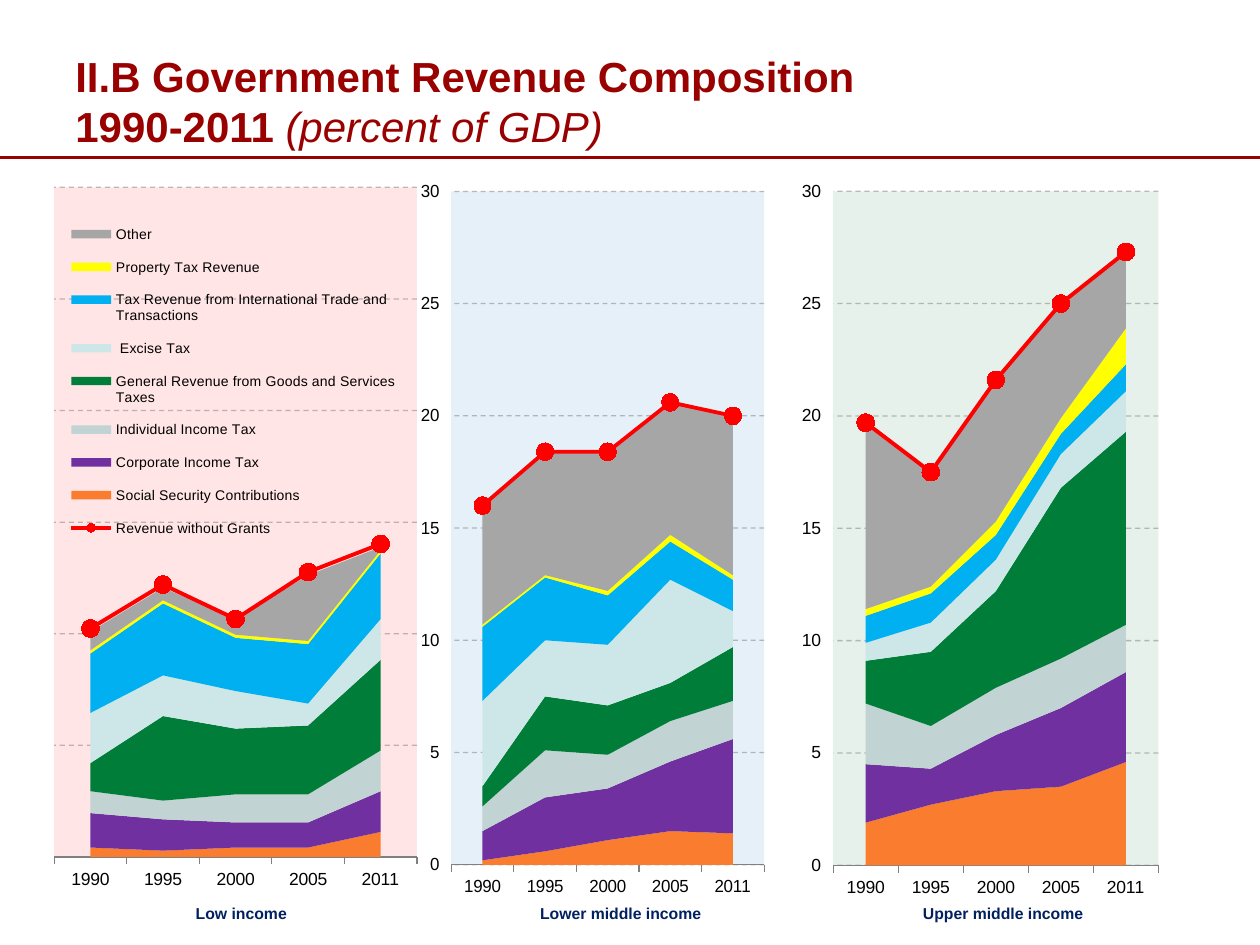
from dataclasses import dataclass

from pptx import Presentation
from pptx.chart.data import CategoryChartData
from pptx.dml.color import RGBColor
from pptx.enum.chart import XL_CHART_TYPE as ChartType
from pptx.enum.chart import XL_LEGEND_POSITION as LegendPosition
from pptx.enum.chart import XL_MARKER_STYLE as MarkerStyle
from pptx.enum.chart import XL_TICK_MARK as TickMark
from pptx.enum.dml import MSO_LINE as LineDash
from pptx.enum.shapes import MSO_CONNECTOR as Connector
from pptx.enum.text import MSO_ANCHOR as Anchor
from pptx.enum.text import PP_ALIGN as Align
from pptx.oxml import parse_xml
from pptx.oxml.ns import nsdecls, qn
from pptx.util import Inches, Pt


@dataclass(frozen=True)
class Theme:
    font: str = "Arial"
    title: str = "990000"
    caption: str = "002060"
    text: str = "000000"
    grid: str = "606060"
    axis: str = "808080"
    total: str = "FF0000"
    title_size: int = 24
    caption_size: int = 9
    axis_size: int = 10
    legend_size: int = 8


THEME = Theme()
YEARS = ["1990", "1995", "2000", "2005", "2011"]
TOTAL_NAME = "Revenue without Grants"
SOURCES = [
    ("Social Security Contributions", "F97C2F"),
    ("Corporate Income Tax", "7030A0"),
    ("Individual Income Tax", "C1D3D2"),
    ("General Revenue from Goods and Services Taxes", "007E39"),
    (" Excise Tax", "CDE7E8"),
    ("Tax Revenue from International Trade and Transactions", "00B0F0"),
    ("Property Tax Revenue", "FFFF00"),
    ("Other", "A6A6A6"),
]


@dataclass(frozen=True)
class Panel:
    """One income group; the last row of values is the total line."""
    caption: str
    caption_at: tuple
    chart_at: tuple
    plot: tuple
    tint: str
    rows: list
    top: float = 30
    step: float = 5
    has_legend: bool = False


PANELS = [
    Panel("Low income", (0.58, 7.12, 2.67, 0.25), (0.37, 1.37, 3, 5.81),
          (0.02, 0.02, 0.96, 0.915), "FF0000",
          [[3, 2, 3, 3, 8], [11, 10, 8, 8, 13], [7, 6, 9, 9, 13],
           [9, 27, 21, 22, 29], [16, 13, 12, 7, 13], [19, 23, 17, 19, 21],
           [1, 1, 1, 1, 1], [6, 4, 5, 21, 1], [73, 87, 76, 91, 100]],
          top=214, step=35.66, has_legend=True),
    Panel("Lower middle income", (3.55, 7.12, 2.75, 0.25), (3.34, 1.38, 3.1, 5.81),
          (0.044, 0.024, 0.831, 0.92), "0070C0",
          [[0.2, 0.6, 1.1, 1.5, 1.4], [1.3, 2.4, 2.3, 3.1, 4.2],
           [1.1, 2.1, 1.5, 1.8, 1.7], [0.9, 2.4, 2.2, 1.7, 2.4],
           [3.8, 2.5, 2.7, 4.6, 1.6], [3.3, 2.8, 2.2, 1.7, 1.4],
           [0.1, 0.1, 0.2, 0.3, 0.2], [5.3, 5.5, 6.2, 6, 7.1],
           [16, 18.4, 18.4, 20.6, 20]]),
    Panel("Upper middle income", (6.5, 7.12, 2.92, 0.25), (6.25, 1.39, 3.1, 5.81),
          (0.117, 0.022, 0.833, 0.921), "007E39",
          [[1.9, 2.7, 3.3, 3.5, 4.6], [2.6, 1.6, 2.5, 3.5, 4],
           [2.7, 1.9, 2.1, 2.2, 2.1], [1.9, 3.3, 4.3, 7.6, 8.6],
           [0.8, 1.3, 1.4, 1.5, 1.8], [1.2, 1.3, 1.1, 0.9, 1.2],
           [0.3, 0.3, 0.6, 0.7, 1.6], [8.3, 5.1, 6.2, 5.1, 3.5],
           [19.7, 17.5, 21.6, 25, 27.3]]),
]


def rgb(color):
    return RGBColor.from_string(color)


def style_font(font, size, color, bold=False, italic=False):
    font.name, font.size, font.bold, font.italic = THEME.font, Pt(size), bold, italic
    font.color.rgb = rgb(color)


def add_text_box(page, at):
    box = page.shapes.add_textbox(*map(Inches, at))
    box.text_frame.word_wrap = True
    return box.text_frame


def add_title(page):
    frame = add_text_box(page, (0.5, 0.08, 8.17, 1.17))
    frame.vertical_anchor = Anchor.BOTTOM
    frame.text = "II.B Government Revenue Composition\v1990-2011 "
    para = frame.paragraphs[0]
    para.add_run().text = "(percent of GDP)"
    *headings, unit = para.runs
    for span in headings:
        style_font(span.font, THEME.title_size, THEME.title, bold=True)
    style_font(unit.font, THEME.title_size, THEME.title, italic=True)


def add_rule(page):
    rule = page.shapes.add_connector(
        Connector.STRAIGHT, 0, Inches(1.25), Inches(10), Inches(1.25))
    rule.line.color.rgb = rgb(THEME.title)
    rule.line.width = Pt(2.25)
    rule._element.spPr.append(parse_xml(f"<a:effectLst {nsdecls('a')}/>"))


def add_caption(page, panel):
    frame = add_text_box(page, panel.caption_at)
    frame.text = panel.caption
    para = frame.paragraphs[0]
    para.alignment = Align.CENTER
    style_font(para.runs[0].font, THEME.caption_size, THEME.caption, bold=True)


def set_layout(parent, index, place, target=""):
    """Place a plot area or legend by fractions of the chart."""
    for old in parent.findall(qn("c:layout")):
        parent.remove(old)
    edges = "".join(f'<c:{name}Mode val="edge"/>' for name in "xy")
    sizes = "".join(f'<c:{name} val="{value}"/>' for name, value in zip("xywh", place))
    parent.insert(index, parse_xml(
        f"<c:layout {nsdecls('c')}><c:manualLayout>{target}{edges}{sizes}"
        "</c:manualLayout></c:layout>"))


def move_total_to_line(chart):
    """Turn the last area series into a marked line on the same axes."""
    area = chart.plots[0]._element
    axes = "".join(f'<c:axId val="{axis.get("val")}"/>'
                   for axis in area.findall(qn("c:axId")))
    line = parse_xml(
        f'<c:lineChart {nsdecls("c")}><c:grouping val="standard"/>'
        f'<c:varyColors val="0"/><c:marker val="1"/>{axes}</c:lineChart>')
    line.insert(2, area.findall(qn("c:ser"))[-1])
    area.addnext(line)

    total = chart.plots[1].series[0]
    total.smooth = False
    total.format.line.color.rgb = rgb(THEME.total)
    total.format.line.width = Pt(2.25)
    total.marker.style, total.marker.size = MarkerStyle.CIRCLE, 10
    total.marker.format.fill.solid()
    total.marker.format.fill.fore_color.rgb = rgb(THEME.total)
    total.marker.format.line.color.rgb = rgb(THEME.total)


def style_axes(chart, panel):
    years, values = chart.category_axis, chart.value_axis
    years.has_major_gridlines = False
    years.major_tick_mark = values.major_tick_mark = TickMark.OUTSIDE
    years.format.line.color.rgb = rgb(THEME.axis)
    values.minimum_scale, values.maximum_scale = 0, panel.top
    values.major_unit = panel.step
    values.tick_labels.number_format = "0"
    values.tick_labels.number_format_is_linked = False
    values.format.line.fill.background()
    values.visible = not panel.has_legend
    values.has_major_gridlines = True
    grid = values.major_gridlines.format.line
    grid.color.rgb = rgb(THEME.grid)
    grid.width, grid.dash_style = Pt(0.75), LineDash.DASH
    for color in values.major_gridlines._xAx.iterfind(
            f"{qn('c:majorGridlines')}//{qn('a:srgbClr')}"):
        color.append(parse_xml(f'<a:alpha {nsdecls("a")} val="40000"/>'))
    values._element.find(qn("c:crossBetween")).set("val", "between")


def style_plot_area(chart, panel):
    plot_area = chart._chartSpace.chart.plotArea
    set_layout(plot_area, 0, panel.plot, '<c:layoutTarget val="inner"/>')
    plot_area.append(parse_xml(
        f'<c:spPr {nsdecls("c", "a")}><a:solidFill><a:srgbClr val="{panel.tint}">'
        '<a:alpha val="10000"/></a:srgbClr></a:solidFill></c:spPr>'))


def add_legend(chart):
    chart.has_legend = True
    legend = chart.legend
    legend.position, legend.include_in_layout = LegendPosition.LEFT, False
    style_font(legend.font, THEME.legend_size, THEME.text)
    set_layout(legend._element, 1, (0.02, 0.05, 0.95, 0.47))


def add_revenue_chart(page, panel):
    data = CategoryChartData()
    data.categories = YEARS
    names = [name for name, _ in SOURCES] + [TOTAL_NAME]
    for name, row in zip(names, panel.rows):
        data.add_series(name, row)
    chart = page.shapes.add_chart(
        ChartType.AREA_STACKED, *map(Inches, panel.chart_at), data).chart
    chart.has_title = chart.has_legend = False
    style_font(chart.font, THEME.axis_size, THEME.text)
    chart.plots[0].vary_by_categories = False
    move_total_to_line(chart)
    for series, (_, color) in zip(chart.plots[0].series, SOURCES):
        series.format.fill.solid()
        series.format.fill.fore_color.rgb = rgb(color)
        series.format.line.fill.background()
    style_axes(chart, panel)
    style_plot_area(chart, panel)
    if panel.has_legend:
        add_legend(chart)


def main():
    deck = Presentation()
    deck.slide_width, deck.slide_height = Inches(10), Inches(7.5)
    page = deck.slides.add_slide(deck.slide_layouts[6])
    add_rule(page)
    add_title(page)
    for panel in PANELS:
        add_caption(page, panel)
        add_revenue_chart(page, panel)
    deck.save("out.pptx")


if __name__ == "__main__":
    main()
